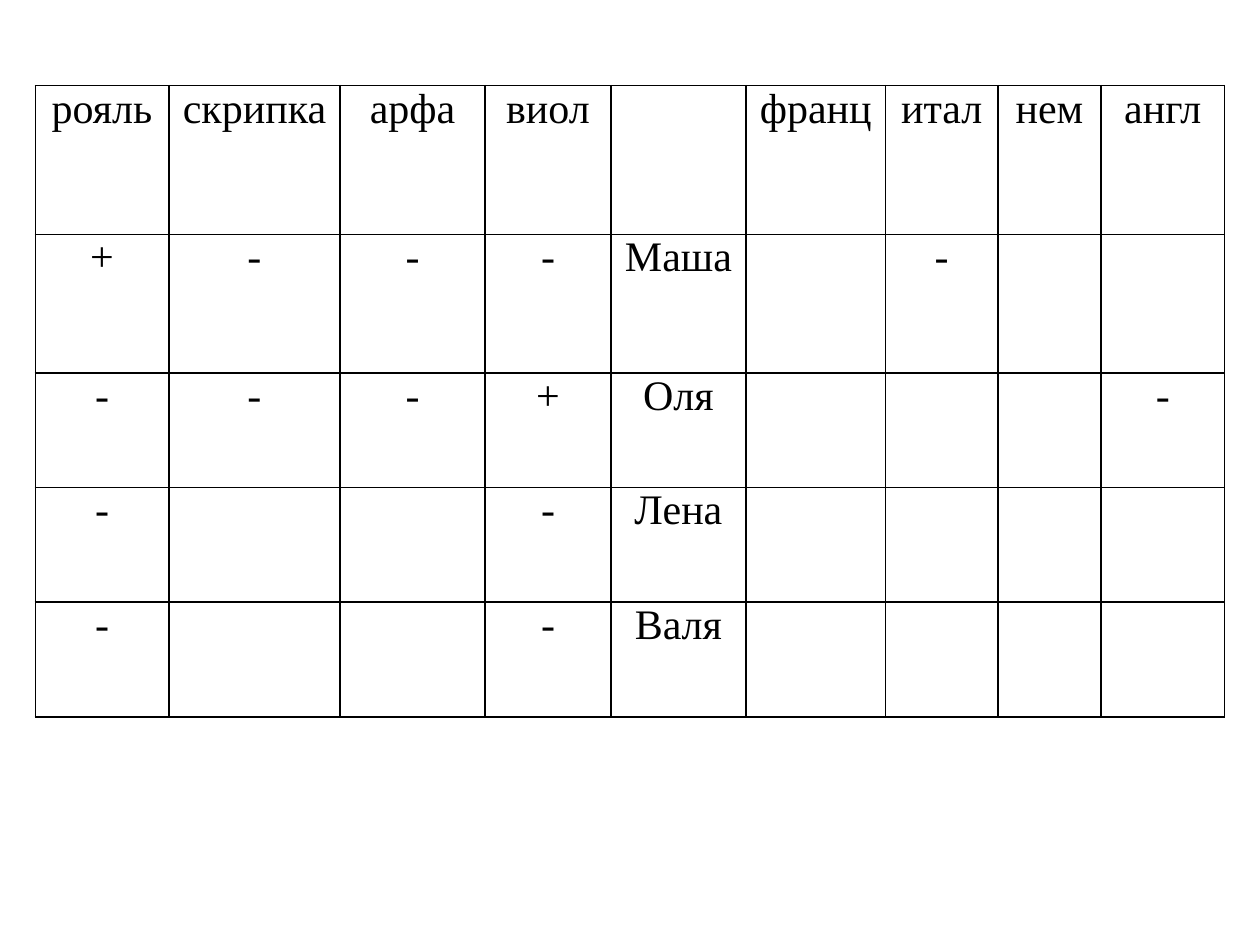
from lxml.etree import SubElement
from pptx import Presentation
from pptx.dml.color import RGBColor
from pptx.enum.text import PP_ALIGN as Align
from pptx.oxml.ns import qn
from pptx.util import Inches, Pt

BLACK = RGBColor(0, 0, 0)
COLUMN_WIDTHS = [1.06, 1.36, 1.15, 1, 1.07, 1.11, 0.89, 0.82, 0.98]
ROW_HEIGHTS = [1.18, 1.1, 0.91, 0.91, 0.91]
ANSWERS = [
    ["рояль", "скрипка", "арфа", "виол", "", "франц", "итал", "нем", "англ"],
    ["+", "-", "-", "-", "Маша", "", "-", "", ""],
    ["-", "-", "-", "+", "Оля", "", "", "", "-"],
    ["-", "", "", "-", "Лена", "", "", "", ""],
    ["-", "", "", "-", "Валя", "", "", "", ""],
]


class SlideBuilder:
    """Holds the text and border style and the slide being built."""

    font_name = "Times New Roman"
    font_size = Pt(24)
    ink = BLACK
    border_width = Pt(1)

    def __init__(self, page):
        self.page = page

    def table(self, left, top, widths, heights, rows):
        frame = self.page.shapes.add_table(
            len(heights), len(widths), Inches(left), Inches(top),
            Inches(sum(widths)), Inches(sum(heights)))
        table = frame.table
        table.first_row = False
        table.horz_banding = False
        for column, width in zip(table.columns, widths):
            column.width = Inches(width)
        for row, height, words in zip(table.rows, heights, rows):
            row.height = Inches(height)
            for cell, word in zip(row.cells, words):
                self.cell(cell, word)

    def cell(self, cell, word):
        cell.margin_left = cell.margin_right = Inches(0.07)
        cell.margin_top = cell.margin_bottom = 0
        self.borders(cell)
        cell.fill.background()
        para = cell.text_frame.paragraphs[0]
        para.alignment = Align.CENTER
        para.font.size = self.font_size
        if word:
            span = para.add_run()
            span.text = word
            span.font.name = self.font_name
            span.font.size = self.font_size
            span.font.color.rgb = self.ink

    def borders(self, cell):
        properties = cell._tc.get_or_add_tcPr()
        for side in ("a:lnL", "a:lnR", "a:lnT", "a:lnB"):
            line = SubElement(properties, qn(side), w=str(self.border_width))
            fill = SubElement(line, qn("a:solidFill"))
            SubElement(fill, qn("a:srgbClr"), val=str(self.ink))


def main():
    deck = Presentation()
    deck.slide_width, deck.slide_height = Inches(10), Inches(7.5)
    builder = SlideBuilder(deck.slides.add_slide(deck.slide_layouts[6]))
    builder.table(0.28, 0.68, COLUMN_WIDTHS, ROW_HEIGHTS, ANSWERS)
    deck.save("out.pptx")


if __name__ == "__main__":
    main()
